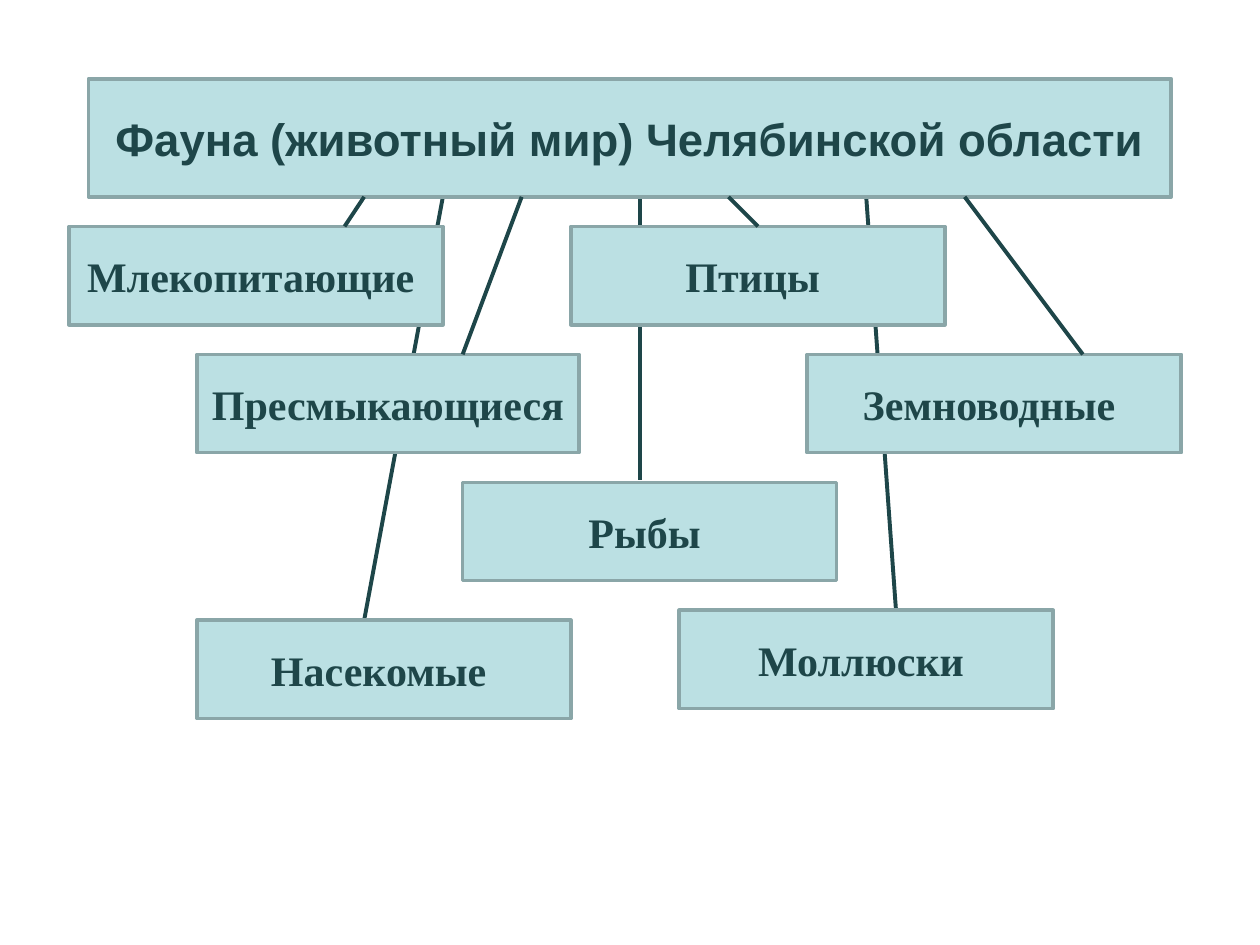
from lxml import etree
from pptx import Presentation
from pptx.dml.color import RGBColor
from pptx.enum.shapes import MSO_CONNECTOR, MSO_SHAPE
from pptx.enum.text import MSO_ANCHOR, PP_ALIGN
from pptx.oxml.ns import qn
from pptx.util import Pt

RECT = MSO_SHAPE.RECTANGLE
LINE = MSO_CONNECTOR.STRAIGHT
MIDDLE = MSO_ANCHOR.MIDDLE
CENTER = PP_ALIGN.CENTER
DARK = RGBColor(0x1E, 0x46, 0x49)
PALE = RGBColor(0xBB, 0xE0, 0xE3)
EDGE = RGBColor(0x8A, 0xA6, 0xA8)
TOP = 0

deck = Presentation()
deck.slide_width, deck.slide_height = Pt(720), Pt(540)
slide = deck.slides.add_slide(deck.slide_layouts[6])
shapes = slide.shapes

# Rows of boxes, from the title's lower edge down
BASE = 112.5
ROW1, ROW2, ROW3, ROW4, ROW5 = 129.4, 202.5, 275.6, 348.75, 354.4
WIDE, HIGH = 213.75, 56.25


def add_box(text, left, top, width, height, font, size):
    box = shapes.add_shape(RECT, Pt(left), Pt(top), Pt(width), Pt(height))
    box.shadow.inherit = False
    box.fill.solid()
    box.fill.fore_color.rgb = PALE
    box.line.color.rgb = EDGE
    box.line.width = Pt(2)
    frame = box.text_frame
    frame.word_wrap = True
    frame.vertical_anchor = MIDDLE
    para = frame.paragraphs[0]
    para.alignment = CENTER
    run = para.add_run()
    run.text = text
    run.font.name = font
    run.font.size = Pt(size)
    run.font.bold = True
    run.font.color.rgb = DARK
    return box


def add_link(start, end, low):
    """Draw a line from the title's lower edge down to the height low."""
    link = shapes.add_connector(LINE, Pt(start), Pt(BASE), Pt(end), Pt(low))
    link.line.color.rgb = DARK
    link.line.width = Pt(2.25)
    etree.SubElement(link._element.spPr, qn("a:effectLst"))
    return link


# Long lines pass behind the boxes
for start, end, low in [
    (495, 512, ROW4),
    (253.1, 208.1, ROW5),
    (365.6, 365.6, 274.3),
]:
    add_link(start, end, low)

add_box("Фауна (животный мир) Челябинской области",
        50.6, 45, 618.75, BASE - 45, "Arial", 26)

boxes = {}
for name, left, top, width in [
    ("Млекопитающие", 39.4, ROW1, WIDE),
    ("Птицы", 326.25, ROW1, WIDE),
    ("Рыбы", 264.4, ROW3, WIDE),
    ("Пресмыкающиеся", 112.5, ROW2, 218.4),
    ("Земноводные", 461.25, ROW2, WIDE),
    ("Насекомые", 112.5, ROW5, WIDE),
    ("Моллюски", 388.1, ROW4, WIDE),
]:
    boxes[name] = add_box(name + " ", left, top, width, HIGH,
                          "Times New Roman", 24)

# Short lines lie in front
for start, end, low in [
    (208.1, 196.9, ROW1),
    (298.1, 264.4, ROW2),
    (551.25, 618.75, ROW2),
]:
    add_link(start, end, low)
bird = add_link(416.25, 433.1, ROW1)
bird.end_connect(boxes["Птицы"], TOP)

deck.save("out.pptx")
